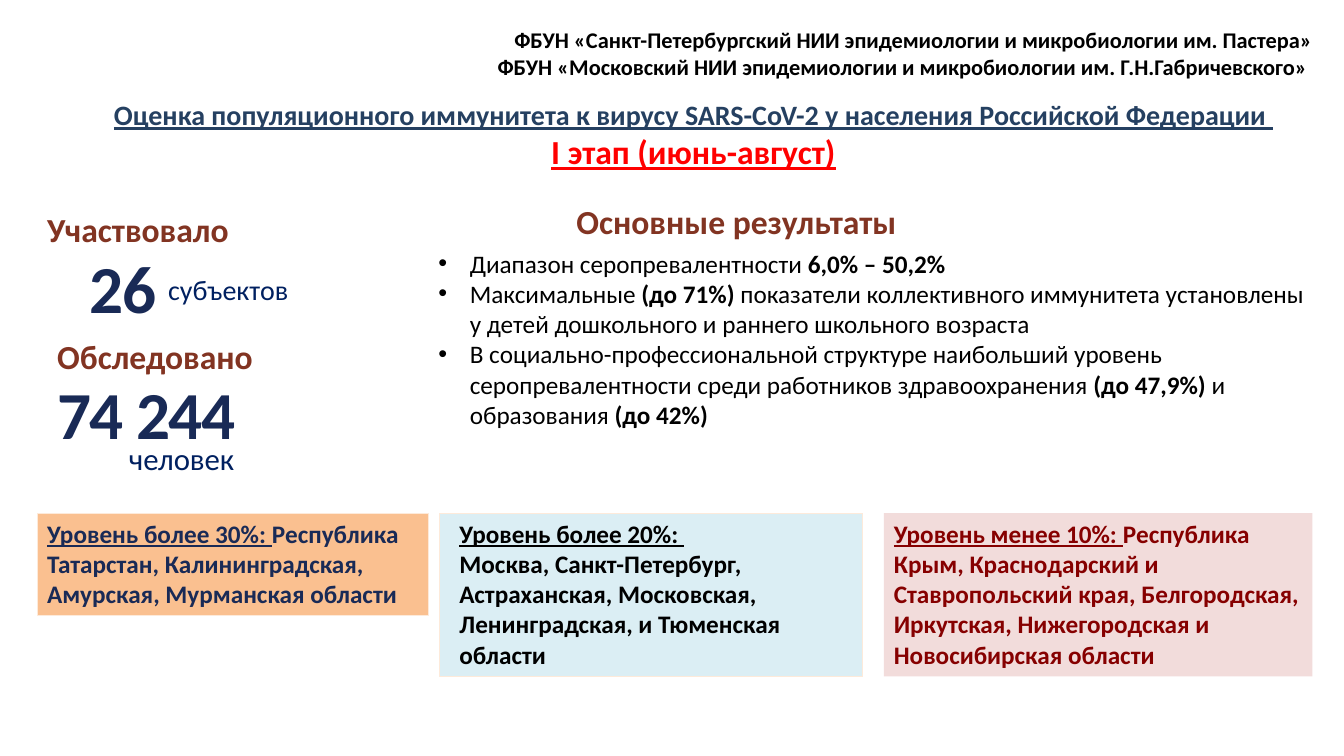
from lxml import etree
from pptx import Presentation
from pptx.dml.color import RGBColor
from pptx.enum.shapes import MSO_SHAPE
from pptx.enum.text import MSO_ANCHOR, MSO_AUTO_SIZE, PP_ALIGN
from pptx.oxml.ns import qn
from pptx.util import Pt

LEFT, CENTER, RIGHT = PP_ALIGN.LEFT, PP_ALIGN.CENTER, PP_ALIGN.RIGHT
TOP = MSO_ANCHOR.TOP
GROW = MSO_AUTO_SIZE.SHAPE_TO_FIT_TEXT
RECTANGLE = MSO_SHAPE.RECTANGLE

THEME = {
    "font": "Calibri",
    "border": "FDEADA",
    "styles": {
        "institute": {"size": 16, "color": "000000", "bold": True},
        "title": {"size": 20, "color": "254061", "bold": True, "underline": True},
        "stage": {"size": 24, "color": "FF0000", "bold": True, "underline": True},
        "heading": {"size": 24, "color": "823422", "bold": True},
        "figure": {"size": 48, "color": "192A56", "bold": True},
        "regions_unit": {"size": 20, "color": "002060"},
        "people_unit": {"size": 22, "color": "002060"},
        "finding": {"size": 18, "color": "000000"},
        "high": {"size": 18, "color": "192A56", "bold": True},
        "middle": {"size": 18, "color": "000000", "bold": True},
        "low": {"size": 18, "color": "860000", "bold": True},
    },
    "fills": {"high": "FAC090", "middle": "DBEEF4", "low": "F2DCDB"},
}
STRONG = {"bold": True}
UNDERLINED = {"underline": True}

# A paragraph is a style and its runs; a run is a text and what it adds to the style.
INSTITUTES = [
    ("institute", [("ФБУН «Санкт-Петербургский НИИ эпидемиологии и микробиологии им. Пастера»", {})]),
    ("institute", [("ФБУН «Московский НИИ эпидемиологии и микробиологии им. Г.Н.Габричевского» ", {})]),
]
TITLE = [
    ("title", [("Оценка популяционного иммунитета к вирусу SARS-CoV-2 "
                "у населения Российской Федерации ", {})]),
    ("stage", [("I этап (июнь-август)", {})]),
]
# Each counter: (text, style, box, alignment), from back to front
COUNTERS = [
    [
        ("субъектов", "regions_unit", (113, 190.8, 139.7, 31.7), LEFT),
        ("26", "figure", (26.6, 179.3, 92.2, 59.8), RIGHT),
        ("Участвовало", "heading", (26.6, 145.4, 198, 36), LEFT),
    ],
    [
        ("человек", "people_unit", (85, 310.3, 124.6, 33.8), LEFT),
        ("74 244", "figure", (33.8, 268.6, 249.1, 59.8), LEFT),
        ("Обследовано", "heading", (33.8, 236.2, 257, 36), LEFT),
    ],
]
FINDINGS = [
    ("finding", [("Диапазон серопревалентности ", {}), ("6,0% – 50,2%", STRONG)]),
    ("finding", [
        ("Максимальные ", {}), ("(до 71%) ", STRONG),
        ("показатели коллективного иммунитета установлены "
         "у детей дошкольного и раннего школьного возраста", {}),
    ]),
    ("finding", [
        ("В социально-профессиональной структуре наибольший уровень "
         "серопревалентности среди работников здравоохранения ", {}),
        ("(до 47,9%) ", STRONG), ("и образования ", {}), ("(до 42%)", STRONG),
    ]),
]
# Each level: (style, left, width, lines, has border, indent, paragraphs)
LEVELS = [
    ("high", 26.6, 279.4, 3, True, 0, [
        ("high", [("Уровень более 30%: ", UNDERLINED),
                  ("Республика Татарстан, Калининградская, Амурская, Мурманская области", {})]),
    ]),
    ("low", 631.4, 306, 5, False, 0, [
        ("low", [("Уровень менее 10%: ", UNDERLINED),
                 ("Республика Крым, Краснодарский и Ставропольский края, Белгородская, "
                  "Иркутская, Нижегородская и Новосибирская области", {})]),
    ]),
    ("middle", 313.9, 302.4, 5, True, 7.2, [
        ("middle", [("Уровень более 20%: ", UNDERLINED)]),
        ("middle", [("Москва, Санкт-Петербург, Астраханская, Московская, "
                     "Ленинградская, и Тюменская области", {})]),
    ]),
]
LEVELS_TOP, LINE_HEIGHT, BOX_PADDING = 366.5, 21.9, 7.2
BULLET_INDENT = 22.5


def rgb(color):
    return RGBColor.from_string(color)


def write(shape, paragraphs, align=LEFT, indent=0, bullet=False):
    frame = shape.text_frame
    frame_format = {"word_wrap": True, "auto_size": GROW, "vertical_anchor": TOP}
    for name, value in frame_format.items():
        setattr(frame, name, value)
    for index, (style_name, runs) in enumerate(paragraphs):
        paragraph = frame.paragraphs[0] if index == 0 else frame.add_paragraph()
        paragraph.alignment = align
        properties = paragraph._p.get_or_add_pPr()
        if indent:
            properties.set("marL", str(Pt(indent)))
        if bullet:
            properties.set("indent", str(-Pt(indent)))
            etree.SubElement(properties, qn("a:buFont"), typeface="Arial")
            etree.SubElement(properties, qn("a:buChar"), char="•")
        if style_name == "figure":
            paragraph.line_spacing = 0.9
        for text, extra in runs:
            run = paragraph.add_run()
            run.text = text
            style = {**THEME["styles"][style_name], **extra}
            font_format = {
                "name": THEME["font"],
                "size": Pt(style["size"]),
                "bold": style.get("bold", False),
                "underline": style.get("underline", False),
            }
            for name, value in font_format.items():
                setattr(run.font, name, value)
            run.font.color.rgb = rgb(style["color"])
            if style_name == "figure":
                run._r.get_or_add_rPr().set("spc", "-100")


def add_text(shapes, box, paragraphs, **layout):
    write(shapes.add_textbox(*map(Pt, box)), paragraphs, **layout)


def add_level(shapes, style_name, left, width, lines, bordered, indent, paragraphs):
    height = lines * LINE_HEIGHT + BOX_PADDING
    panel = shapes.add_shape(RECTANGLE, *map(Pt, (left, LEVELS_TOP, width, height)))
    panel.shadow.inherit = False
    panel.fill.solid()
    panel.fill.fore_color.rgb = rgb(THEME["fills"][style_name])
    if bordered:
        panel.line.color.rgb = rgb(THEME["border"])
        panel.line.width = Pt(0.75)
    else:
        panel.line.fill.background()
    write(panel, paragraphs, indent=indent)


def main():
    presentation = Presentation()
    presentation.slide_width, presentation.slide_height = Pt(960), Pt(540)
    shapes = presentation.slides.add_slide(presentation.slide_layouts[6]).shapes

    add_text(shapes, (139.7, 15.1, 805, 46.1), INSTITUTES, align=RIGHT)
    add_text(shapes, (11.5, 66.2, 967.7, 60.5), TITLE, align=CENTER)
    for counter in COUNTERS:
        group = shapes.add_group_shape()
        for text, style_name, box, align in counter:
            add_text(group.shapes, box, [(style_name, [(text, {})])], align=align)
    add_text(shapes, (306, 173.5, 642.2, 138.2), FINDINGS, indent=BULLET_INDENT, bullet=True)
    add_text(shapes, (404.6, 139.7, 416.2, 36), [("heading", [("Основные результаты", {})])])
    for level in LEVELS:
        add_level(shapes, *level)

    presentation.save("out.pptx")


if __name__ == "__main__":
    main()
